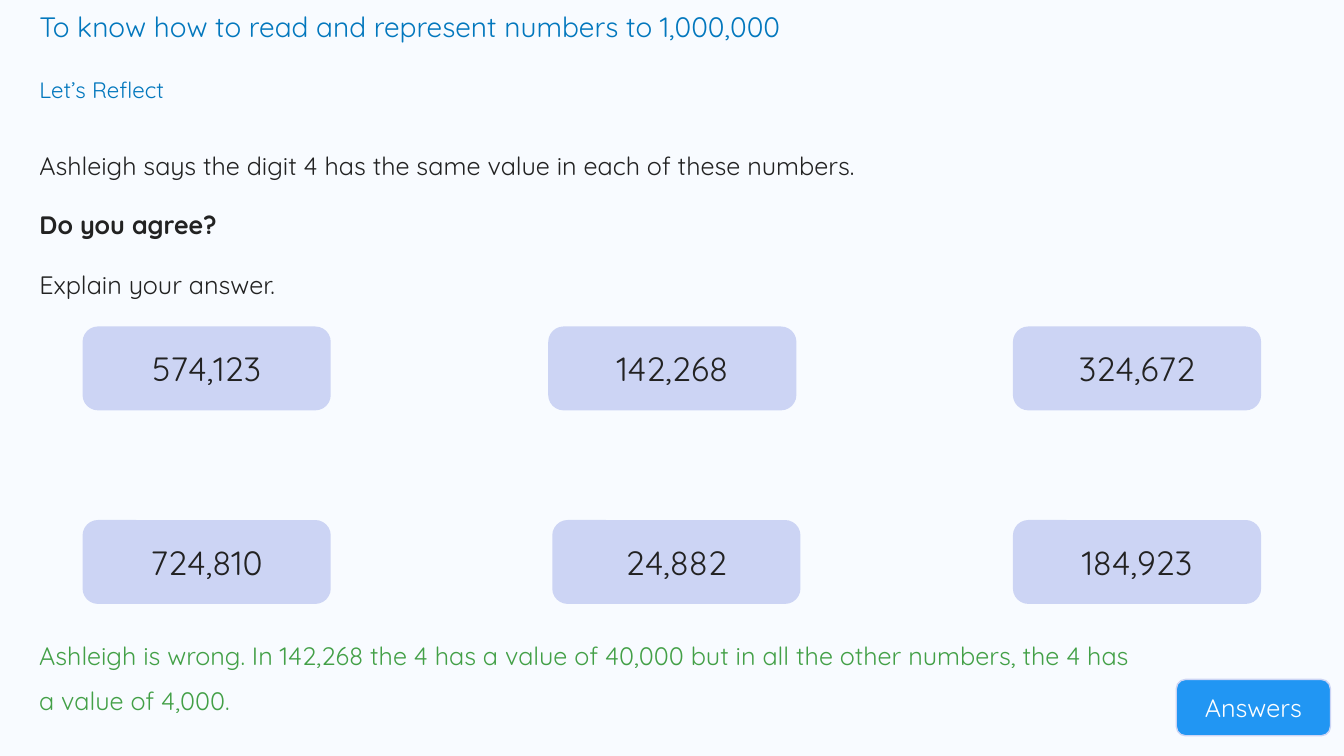
from lxml.etree import SubElement
from pptx import Presentation
from pptx.dml.color import RGBColor
from pptx.enum.shapes import MSO_SHAPE as Preset
from pptx.enum.text import MSO_ANCHOR as Anchor, MSO_AUTO_SIZE as AutoSize, PP_ALIGN as Align
from pptx.oxml.ns import qn
from pptx.util import Pt

EMU_PER_PX = 9144
FONT = "Quicksand"
PAPER = RGBColor(0xF8, 0xFB, 0xFF)
HEADING_BLUE = RGBColor(0x02, 0x77, 0xBD)
BUTTON_BLUE = RGBColor(0x21, 0x96, 0xF3)
LAVENDER = RGBColor(0xCC, 0xD4, 0xF4)
INK = RGBColor(0x22, 0x22, 0x22)
ANSWER_GREEN = RGBColor(0x43, 0xA0, 0x47)
WHITE = RGBColor(0xFF, 0xFF, 0xFF)

NUMBER_ROWS = [
    (326, [(84, "574,123"), (546, "142,268"), (1007, "324,672")]),
    (518, [(84, "724,810"), (550, "24,882"), (1007, "184,923")]),
]


def px(length):
    return length * EMU_PER_PX


def style(paragraph, size, color, bold=False, align=Align.LEFT):
    paragraph.alignment = align
    font = paragraph.font
    font.name = FONT
    font.size = Pt(size)
    font.bold = bold
    font.color.rgb = color


def write(box, bounds, lines, size, color, spacing=1.0, gap=0, bold_line=None):
    box.left, box.top, box.width, box.height = map(px, bounds)
    frame = box.text_frame
    frame.word_wrap = True
    frame.auto_size = AutoSize.NONE
    frame.vertical_anchor = Anchor.TOP
    frame.text = "\n".join(lines)
    for index, paragraph in enumerate(frame.paragraphs):
        paragraph.line_spacing = spacing
        paragraph.space_before = Pt(gap if index else 0)
        properties = paragraph._p.get_or_add_pPr()
        properties.set("marL", "0")
        properties.set("indent", "0")
        SubElement(properties, qn("a:buNone"))
        style(paragraph, size, color, bold=lines[index] == bold_line)


def add_card(slide, bounds, label, size, fill, color, line_width):
    card = slide.shapes.add_shape(Preset.ROUNDED_RECTANGLE, *map(px, bounds))
    card.shadow.inherit = False
    card.fill.solid()
    card.fill.fore_color.rgb = fill
    card.line.color.rgb = LAVENDER
    card.line.width = Pt(line_width)
    frame = card.text_frame
    frame.text = label
    frame.vertical_anchor = Anchor.MIDDLE
    style(frame.paragraphs[0], size, color, align=Align.CENTER)


def main():
    deck = Presentation()
    deck.slide_width, deck.slide_height = 12192000, 6858000
    slide = deck.slides.add_slide(deck.slide_layouts.get_by_name("Two Content"))
    slide.background.fill.solid()
    slide.background.fill.fore_color.rgb = PAPER

    objective, section, question = list(slide.placeholders)[:3]
    write(objective, (29, 4, 1234, 44),
          ["To know how to read and represent numbers to 1,000,000"], 20, HEADING_BLUE)
    write(section, (29, 71, 297, 46), ["Let’s Reflect"], 16, HEADING_BLUE)
    write(question, (29, 129, 1284, 188),
          ["Ashleigh says the digit 4 has the same value in each of these numbers.",
           "Do you agree?", "Explain your answer."],
          18, INK, spacing=1.5, gap=10, bold_line="Do you agree?")

    add_card(slide, (1167, 674, 153, 56), "Answers", 18, BUTTON_BLUE, WHITE, 1)
    answer = slide.shapes.add_textbox(0, 0, 0, 0)
    write(answer, (29, 615, 1117, 95),
          ["Ashleigh is wrong. In 142,268 the 4 has a value of 40,000 "
           "but in all the other numbers, the 4 has a value of 4,000."],
          18, ANSWER_GREEN, spacing=1.5)

    for top, numbers in NUMBER_ROWS:
        for left, number in numbers:
            add_card(slide, (left, top, 242, 79), number, 24, LAVENDER, INK, 3)

    deck.save("out.pptx")


if __name__ == "__main__":
    main()
